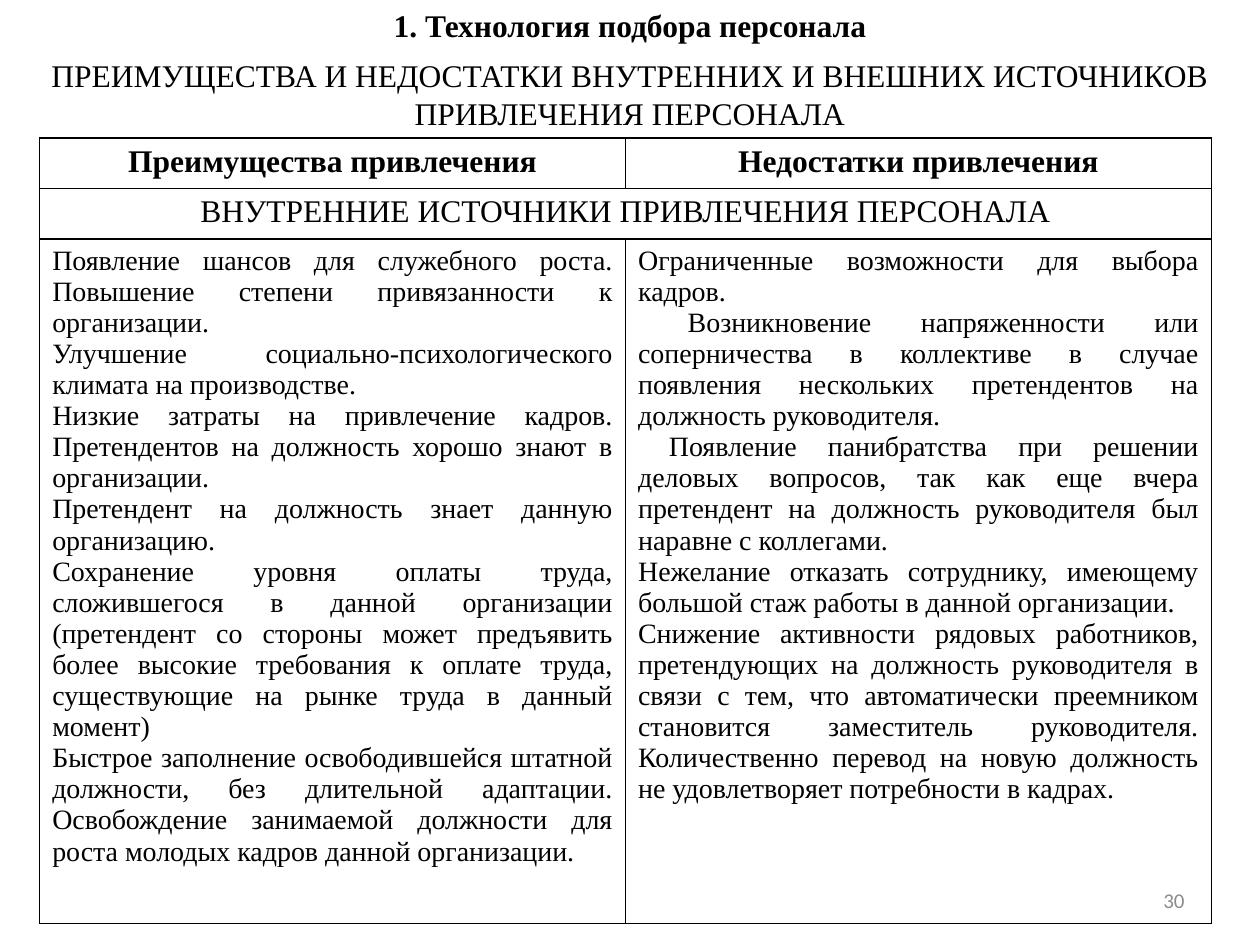
import pptx
import pptx.dml.color
import pptx.enum.text
import pptx.oxml
import pptx.oxml.ns
import pptx.util

Cm, Pt = pptx.util.Cm, pptx.util.Pt
RGB = pptx.dml.color.RGBColor
Align = pptx.enum.text.PP_ALIGN
Anchor = pptx.enum.text.MSO_ANCHOR

theme = {
    "ink": RGB(0, 0, 0),
    "grey": RGB(0x8C, 0x8C, 0x8C),
    "serif": "Times New Roman",
    "sans": "Calibri",
    "head": Pt(18),
    "body": Pt(16),
    "note": Pt(12),
    "line": Pt(1),
}
plain = {"name": theme["serif"], "size": theme["head"], "bold": False}
strong = {**plain, "bold": True}
small = {**plain, "size": theme["body"]}
note = {**plain, "name": theme["sans"], "size": theme["note"]}


def write(frame, lines, look, align, ink=theme["ink"]):
    """Fill a text frame; each line is a text and its first-line indent in cm."""
    frame.word_wrap = True
    for i, (text, indent) in enumerate(lines):
        par = frame.paragraphs[0] if i == 0 else frame.add_paragraph()
        par.text = text
        par.alignment = align
        if indent:
            par._p.get_or_add_pPr().set("indent", str(Cm(indent)))
        for key, value in look.items():
            setattr(par.font, key, value)
        par.font.color.rgb = ink


def frame_cell(cell):
    """Draw a thin line on all four sides and leave the cell unfilled."""
    props = cell._tc.get_or_add_tcPr()
    for side in "LRTB":
        props.append(pptx.oxml.parse_xml(
            f'<a:ln{side} {pptx.oxml.ns.nsdecls("a")} w="{theme["line"]}">'
            f'<a:solidFill><a:srgbClr val="{theme["ink"]}"/></a:solidFill>'
            f'</a:ln{side}>'))
    cell.fill.background()


deck = pptx.Presentation()
deck.slide_width, deck.slide_height = Cm(25.4), Cm(19.05)
slide = deck.slides.add_slide(deck.slide_layouts[5])

# Headings
title = slide.shapes.title
place = {"left": Cm(0), "top": Cm(0), "width": Cm(25.4), "height": Cm(1.03)}
for key, value in place.items():
    setattr(title, key, value)
title.text_frame.auto_size = pptx.enum.text.MSO_AUTO_SIZE.NONE
title.text_frame.vertical_anchor = Anchor.TOP
write(title.text_frame, [("1. Технология подбора персонала", 0)],
      strong, Align.CENTER)

topic = slide.shapes.add_textbox(Cm(0), Cm(1), Cm(25.4), Cm(1.8))
write(topic.text_frame, [(
    "ПРЕИМУЩЕСТВА И НЕДОСТАТКИ ВНУТРЕННИХ И ВНЕШНИХ ИСТОЧНИКОВ "
    "ПРИВЛЕЧЕНИЯ ПЕРСОНАЛА", 0)], plain, Align.CENTER)

# Table
pros = [
    ("Появление шансов для служебного роста. Повышение степени "
     "привязанности к организации.", 0),
    ("Улучшение социально-психологического климата на производстве.", 0),
    ("Низкие затраты на привлечение кадров. Претендентов на должность "
     "хорошо знают в организации.", 0),
    ("Претендент на должность знает данную организацию.", 0),
    ("Сохранение уровня оплаты труда, сложившегося в данной организации "
     "(претендент со стороны может предъявить более высокие требования к "
     "оплате труда, существующие на рынке труда в данный момент)", 0),
    ("Быстрое заполнение освободившейся штатной должности, без длительной "
     "адаптации. Освобождение занимаемой должности для роста молодых кадров "
     "данной организации.", 0),
]
cons = [
    ("Ограниченные возможности для выбора кадров.", 0),
    ("Возникновение напряженности или соперничества в коллективе в случае "
     "появления нескольких претендентов на должность руководителя.", 1),
    ("Появление панибратства при решении деловых вопросов, так как еще вчера "
     "претендент на должность руководителя был наравне с коллегами.", 0.62),
    ("Нежелание отказать сотруднику, имеющему большой стаж работы в данной "
     "организации.", 0),
    ("Снижение активности рядовых работников, претендующих на должность "
     "руководителя в связи с тем, что автоматически преемником становится "
     "заместитель руководителя. Количественно перевод на новую должность "
     "не удовлетворяет потребности в кадрах.", 0),
]
rows = [
    (1.01, strong, Align.CENTER,
     [[("Преимущества привлечения", 0)], [("Недостатки привлечения", 0)]]),
    (1.01, plain, Align.CENTER,
     [[("ВНУТРЕННИЕ ИСТОЧНИКИ ПРИВЛЕЧЕНИЯ ПЕРСОНАЛА", 0)]]),
    (13.8, small, Align.JUSTIFY, [pros, cons]),
]
grid = slide.shapes.add_table(
    len(rows), 2, Cm(0.8), Cm(2.78), Cm(23.62), Cm(15.82)).table
grid.first_row = grid.horz_banding = False
for r, (height, look, align, texts) in enumerate(rows):
    grid.rows[r].height = Cm(height)
    for c, lines in enumerate(texts):
        write(grid.cell(r, c).text_frame, lines, look, align)
grid.cell(1, 0).merge(grid.cell(1, 1))
for cell in grid.iter_cells():
    frame_cell(cell)

# Page number
page = slide.shapes.add_textbox(Cm(18.2), Cm(17.65), Cm(5.93), Cm(1.01))
page.text_frame.vertical_anchor = Anchor.MIDDLE
write(page.text_frame, [("30", 0)], note, Align.RIGHT, theme["grey"])

deck.save("out.pptx")
